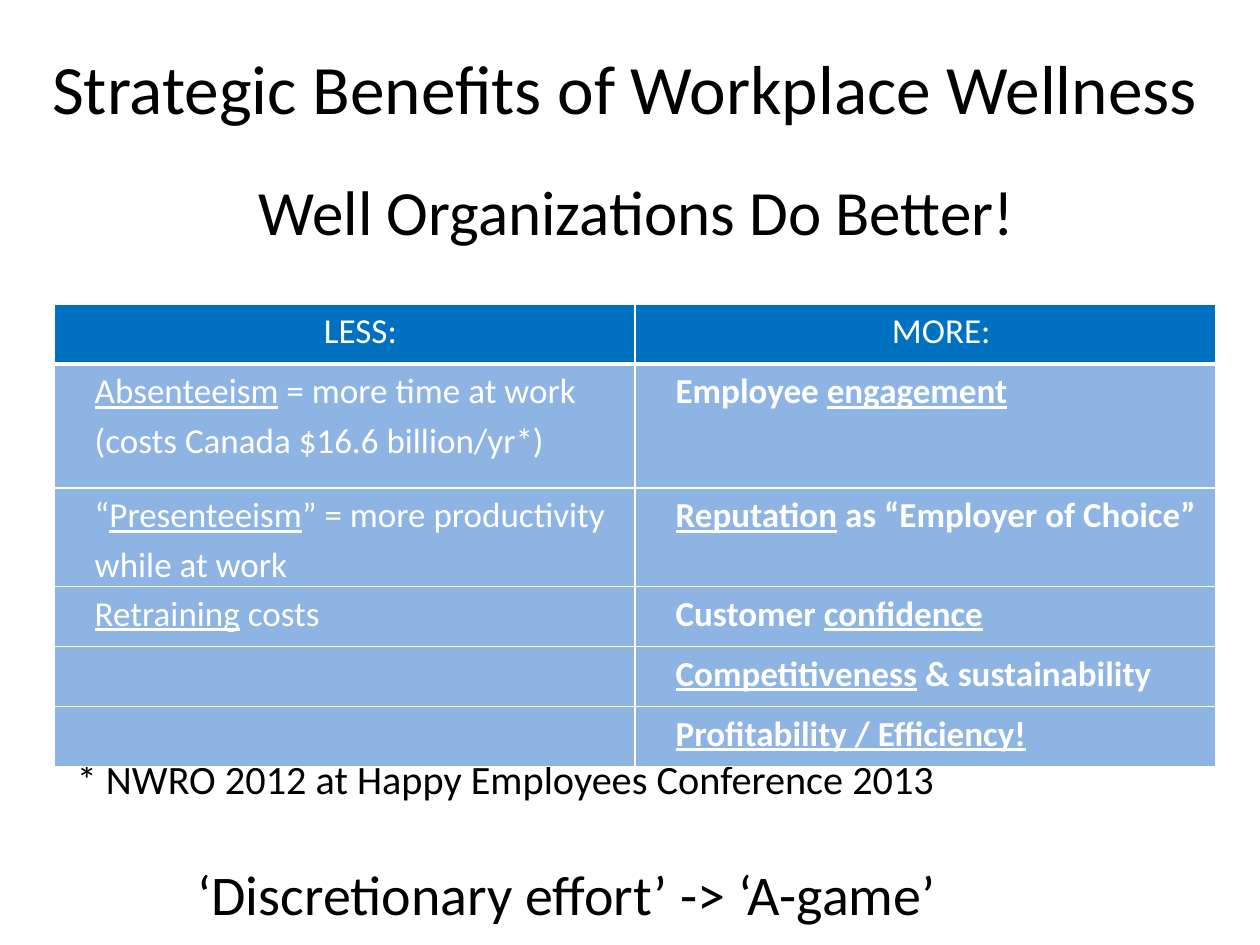
from lxml import etree
from pptx import Presentation
from pptx.dml.color import RGBColor
from pptx.enum.text import MSO_ANCHOR, PP_ALIGN
from pptx.oxml.ns import qn
from pptx.util import Cm, Pt

LEFT, CENTER = PP_ALIGN.LEFT, PP_ALIGN.CENTER
MIDDLE = MSO_ANCHOR.MIDDLE

BLACK = RGBColor(0x00, 0x00, 0x00)
WHITE = RGBColor(0xFF, 0xFF, 0xFF)
HEADER_BLUE = RGBColor(0x00, 0x70, 0xC0)
BODY_BLUE = RGBColor(0x8E, 0xB4, 0xE3)
FONT = "Calibri"
TITLE_ONLY = 5

ROW_HEIGHTS = [Cm(1.21), Cm(2.5), Cm(1.98), Cm(1.21), Cm(1.21), Cm(1.21)]
# Text between underscores is underlined.
BENEFITS = [
    ("LESS:", "MORE:"),
    ("_Absenteeism_ = more time at work (costs Canada $16.6 billion/yr*)",
     "Employee _engagement_"),
    ("“_Presenteeism_” = more productivity while at work",
     "_Reputation_ as “Employer of Choice”"),
    ("_Retraining_ costs", "Customer _confidence_"),
    ("", "_Competitiveness_ & sustainability"),
    ("", "_Profitability / Efficiency!_"),
]


def format_para(para, size, color, align, bold=False):
    para.alignment = align
    font = para.font
    font.name, font.size, font.bold = FONT, Pt(size), bold
    font.color.rgb = color


def set_title(page, text):
    title = page.shapes.title
    title.left, title.top = Cm(0.5), Cm(0.15)
    title.width, title.height = Cm(24.2), Cm(3.18)
    title.text_frame.text = text
    title.text_frame.vertical_anchor = MIDDLE
    format_para(title.text_frame.paragraphs[0], 39.6, BLACK, CENTER)


def add_text(page, text, left, top, height, size, align=CENTER):
    box = page.shapes.add_textbox(left, top, Cm(22.86), height)
    box.text_frame.word_wrap = True
    para = box.text_frame.paragraphs[0]
    para.text = text
    format_para(para, size, BLACK, align)


def set_borders(cell, bottom_width):
    properties = cell._tc.get_or_add_tcPr()
    widths = {"a:lnL": 1, "a:lnR": 1, "a:lnT": 1, "a:lnB": bottom_width}
    for index, (tag, width) in enumerate(widths.items()):
        line = etree.Element(qn(tag), w=str(Pt(width)))
        fill = etree.SubElement(line, qn("a:solidFill"))
        etree.SubElement(fill, qn("a:srgbClr"), val=str(WHITE))
        properties.insert(index, line)


def fill_cell(cell, text, is_header, bold):
    cell.fill.solid()
    cell.fill.fore_color.rgb = HEADER_BLUE if is_header else BODY_BLUE
    cell.margin_left = cell.margin_right = Cm(0.18)
    cell.margin_top = cell.margin_bottom = 0
    set_borders(cell, 3 if is_header else 1)

    para = cell.text_frame.paragraphs[0]
    format_para(para, 20, WHITE, CENTER if is_header else LEFT, bold)
    para.line_spacing = 1.15
    para._p.get_or_add_pPr().set("marL", str(Cm(0.64)))
    for index, part in enumerate(text.split("_")):
        if part:
            span = para.add_run()
            span.text = part
            span.font.underline = index % 2 == 1


def add_benefits_table(page):
    frame = page.shapes.add_table(len(BENEFITS), 2, Cm(1.09), Cm(6.13),
                                  Cm(23.42), sum(ROW_HEIGHTS))
    table = frame.table
    for row, (height, texts) in enumerate(zip(ROW_HEIGHTS, BENEFITS)):
        table.rows[row].height = height
        for column, text in enumerate(texts):
            is_header = row == 0
            bold = column == 1 and not is_header
            fill_cell(table.cell(row, column), text, is_header, bold)


def main():
    deck = Presentation()
    deck.slide_width, deck.slide_height = Cm(25.4), Cm(19.05)
    page = deck.slides.add_slide(deck.slide_layouts[TITLE_ONLY])

    add_text(page, "Well Organizations Do Better!",
             Cm(1.4), Cm(3.35), Cm(1.8), 36)
    add_text(page, "* NWRO 2012 at Happy Employees Conference 2013",
             Cm(1.3), Cm(15.08), Cm(1.24), 23, LEFT)
    add_benefits_table(page)
    set_title(page, "Strategic Benefits of Workplace Wellness")
    add_text(page, "‘Discretionary effort’ -> ‘A-game’",
             Cm(0), Cm(17.2), Cm(1.73), 32)
    deck.save("out.pptx")


if __name__ == "__main__":
    main()
